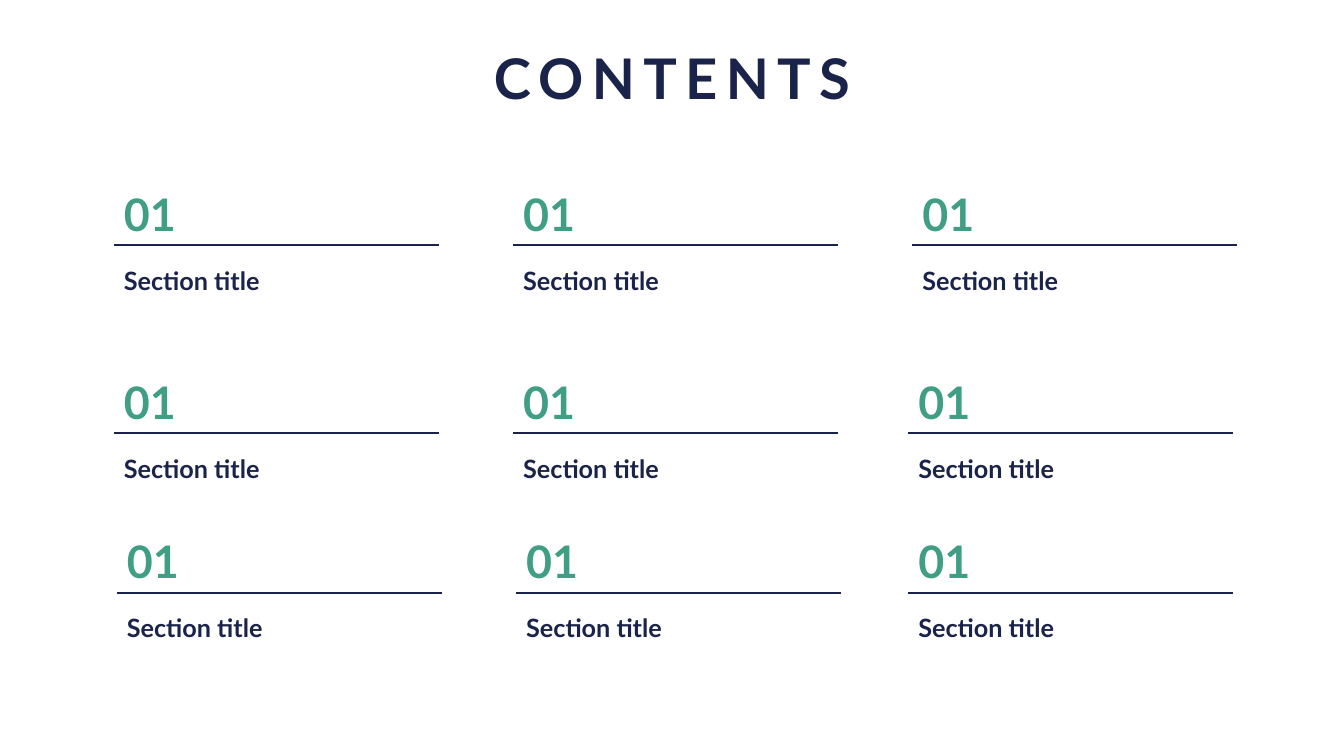
from dataclasses import dataclass

from lxml.etree import SubElement
from pptx import Presentation
from pptx.dml.color import RGBColor
from pptx.enum.shapes import MSO_CONNECTOR as Connector
from pptx.enum.text import MSO_ANCHOR as Anchor, MSO_AUTO_SIZE as AutoSize, PP_ALIGN as Align
from pptx.oxml.ns import qn
from pptx.util import Inches, Pt

TITLE = "CONTENTS"
SECTIONS = [
    [("01", "Section title"), ("01", "Section title"), ("01", "Section title")],
    [("01", "Section title"), ("01", "Section title"), ("01", "Section title")],
    [("01", "Section title"), ("01", "Section title"), ("01", "Section title")],
]
COLUMN_LEFTS = [
    (1.13, 5.09, 9.05),
    (1.13, 5.09, 9.01),
    (1.16, 5.12, 9.01),
]
RULE_TOPS = (2.43, 4.3, 5.88)
RULE_WIDTH = 3.22
NUMBER_RISE = 0.57


@dataclass(frozen=True)
class Theme:
    font: str = "Lato"
    navy: RGBColor = RGBColor(0x1A, 0x24, 0x4A)
    green: RGBColor = RGBColor(0x40, 0x9E, 0x85)
    title_size: int = 40
    number_size: int = 32
    section_size: int = 18
    rule_weight: float = 1.5


THEME = Theme()


def write(box, text, size, color, spacing, before=0, align=Align.LEFT, tracking=0):
    frame = box.text_frame
    frame.word_wrap = True
    frame.auto_size = AutoSize.NONE
    frame.vertical_anchor = Anchor.TOP
    para = frame.paragraphs[0]
    para.alignment = align
    para.line_spacing = spacing
    para.space_before = Pt(before)
    span = para.add_run()
    span.text = text
    span.font.name = THEME.font
    span.font.size = Pt(size)
    span.font.bold = True
    span.font.color.rgb = color
    if tracking:
        span.font._element.set("spc", str(tracking * 100))


def add_rule(page, left, top):
    rule = page.shapes.add_connector(
        Connector.STRAIGHT, Inches(left), Inches(top), Inches(left + RULE_WIDTH), Inches(top)
    )
    rule.line.color.rgb = THEME.navy
    rule.line.width = Pt(THEME.rule_weight)
    SubElement(rule._element.spPr, qn("a:effectLst"))


def add_section(page, number, name, left, top):
    number_box = page.shapes.add_textbox(
        Inches(left), Inches(top - NUMBER_RISE), Inches(1.58), Inches(0.56)
    )
    write(number_box, number, THEME.number_size, THEME.green, spacing=0.9, before=10)
    name_box = page.shapes.add_textbox(
        Inches(left), Inches(top), Inches(RULE_WIDTH), Inches(1.02)
    )
    write(name_box, name, THEME.section_size, THEME.navy, spacing=1.5, before=12)
    add_rule(page, left, top)


def main():
    deck = Presentation()
    deck.slide_width, deck.slide_height = Inches(13.33), Inches(7.5)
    page = deck.slides.add_slide(deck.slide_layouts[5])
    title = page.shapes.title
    title.left, title.top = Inches(4.56), Inches(0.46)
    title.width, title.height = Inches(4.21), Inches(0.71)
    write(title, TITLE, THEME.title_size, THEME.navy, spacing=0.9, align=Align.CENTER, tracking=6)
    for row, lefts, top in zip(SECTIONS, COLUMN_LEFTS, RULE_TOPS):
        for (number, name), left in zip(row, lefts):
            add_section(page, number, name, left, top)
    deck.save("out.pptx")


if __name__ == "__main__":
    main()
